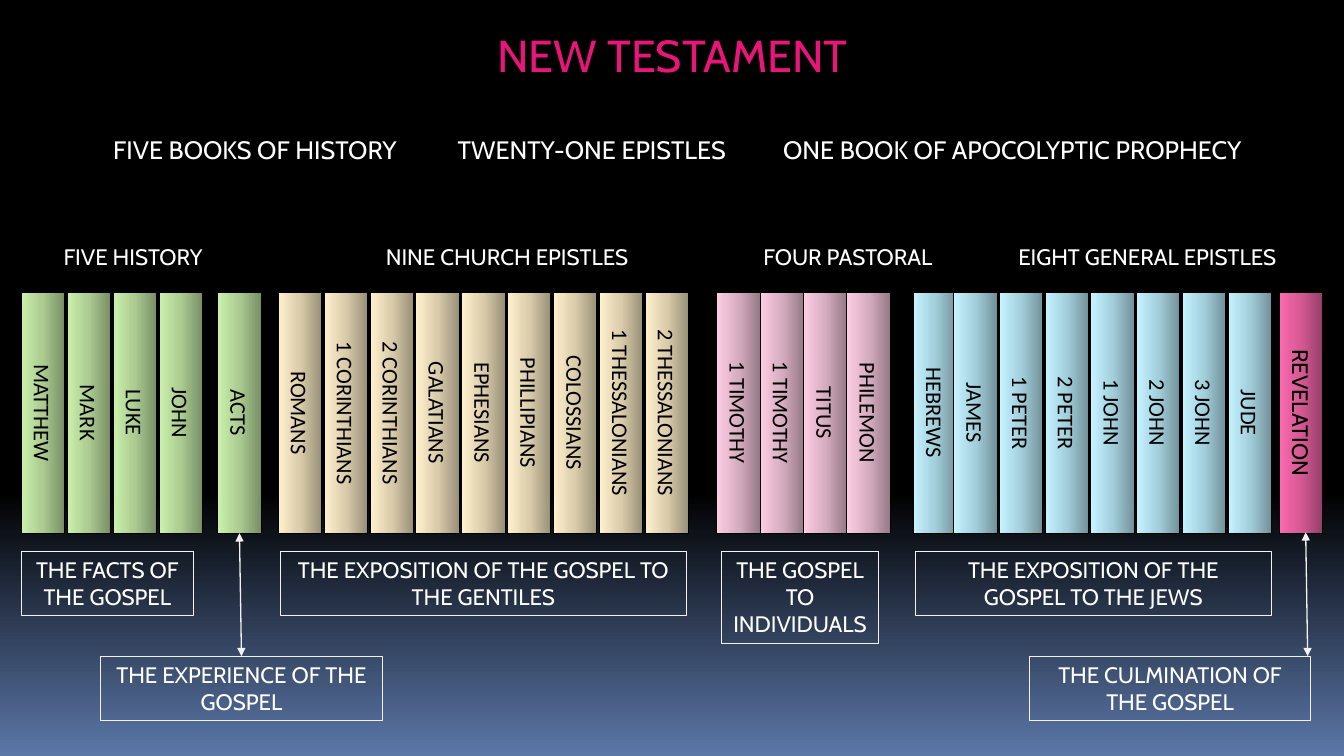
from lxml import etree
from pptx import Presentation
from pptx.dml.color import RGBColor
from pptx.enum import shapes, text
from pptx.oxml import ns
from pptx.util import Inches, Pt

HUES = {
    "black": "000000", "white": "FFFFFF", "rule": "F2F2F2",
    "title": "EA157A", "dusk": "5B77A8",
}
# Spine shades, from the right edge to the left
SPINES = {
    "green": ("788F66", "ABCB91", "CBF1AC"),
    "tan": ("999078", "DACCAB", "FFF1CE"),
    "pink": ("967987", "D6ADC0", "FECDE4"),
    "blue": ("72919A", "A2CFDB", "C5F3FF"),
    "rose": ("953E68", "D45993", "FC69AF"),
}
BOOK_TOP, BOOK_W, BOOK_H = 2.9, 0.43, 2.39

# Shade, left of first book, left of last book, names
SHELF = [
    ("green", 0.21, 1.58, ["MATTHEW", "MARK", "LUKE", "JOHN"]),
    ("green", 2.16, 2.16, ["ACTS"]),
    ("tan", 2.76, 6.4, ["ROMANS", "1 CORINTHIANS", "2 CORINTHIANS", "GALATIANS",
                        "EPHESIANS", "PHILLIPIANS", "COLOSSIANS",
                        "1 THESSALONIANS", "2 THESSALONIANS"]),
    ("pink", 7.11, 8.4, ["1 TIMOTHY", "1 TIMOTHY", "TITUS", "PHILEMON"]),
    ("blue", 9.06, 9.06, ["HEBREWS"]),
    ("blue", 9.46, 12.18, ["JAMES", "1 PETER", "2 PETER", "1 JOHN", "2 JOHN",
                           "3 JOHN", "JUDE"]),
    ("rose", 12.69, 12.69, ["REVELATION"]),
]
# Left, top, width, height, words
NOTES = [
    (0.21, 5.47, 1.71, 0.64, "THE FACTS OF THE GOSPEL"),
    (2.78, 5.47, 4.03, 0.64, "THE EXPOSITION OF THE GOSPEL TO THE GENTILES"),
    (7.16, 5.47, 1.55, 0.91, "THE GOSPEL TO INDIVIDUALS"),
    (9.08, 5.47, 3.53, 0.64, "THE EXPOSITION OF THE GOSPEL TO THE JEWS"),
    (1, 6.51, 2.79, 0.64, "THE EXPERIENCE OF THE GOSPEL"),
    (10.21, 6.51, 2.79, 0.64, "THE CULMINATION OF THE GOSPEL"),
]
# Centre and words
PARTS = [(2.53, "FIVE BOOKS OF HISTORY"), (5.87, "TWENTY-ONE EPISTLES"),
         (10.04, "ONE BOOK OF APOCOLYPTIC PROPHECY")]
GROUPS = [(1.32, "FIVE HISTORY"), (5.03, "NINE CHURCH EPISTLES"),
          (8.41, "FOUR PASTORAL"), (11.38, "EIGHT GENERAL EPISTLES")]


def shade(fill, root, stops, angle):
    """Give a fill a linear gradient with any number of stops."""
    fill.gradient()
    fill.gradient_angle = angle
    track = root.find(".//" + ns.qn("a:gsLst"))
    for stop in list(track):
        track.remove(stop)
    for place, hue in stops:
        stop = etree.SubElement(track, ns.qn("a:gs"), pos=str(place * 1000))
        etree.SubElement(stop, ns.qn("a:srgbClr"), val=hue)


def write(shape, words, size, hue, font="Cabin"):
    para = shape.text_frame.paragraphs[0]
    para.alignment = text.PP_ALIGN.CENTER
    run = para.add_run()
    run.text = words
    run.font.size = Pt(size)
    run.font.name = font
    run.font.color.rgb = RGBColor.from_string(HUES[hue])


def block(slide, box, edge, weight=0.75):
    shape = slide.shapes.add_shape(shapes.MSO_SHAPE.RECTANGLE, *map(Inches, box))
    shape.shadow.inherit = False
    shape.fill.background()
    shape.line.color.rgb = RGBColor.from_string(HUES[edge])
    shape.line.width = Pt(weight)
    shape.text_frame.word_wrap = True
    return shape


def title(slide, box):
    shape = block(slide, box, "black", 1.5)
    shape.fill.solid()
    shape.fill.fore_color.rgb = RGBColor.from_string(HUES["black"])
    shape.text_frame.vertical_anchor = text.MSO_ANCHOR.TOP
    write(shape, "NEW TESTAMENT", 32, "title")


def heads(slide, top, height, size, items):
    """Set a row of headings, each about its own centre."""
    wide = 5
    for mid, words in items:
        box = (mid - wide / 2, top, wide, height)
        shape = slide.shapes.add_textbox(*map(Inches, box))
        shape.text_frame.word_wrap = True
        write(shape, words, size, "white")


def book(slide, left, name, tone):
    shape = block(slide, (left, BOOK_TOP, BOOK_W, BOOK_H), "black")
    shade(shape.fill, shape.element, zip((0, 50, 100), SPINES[tone]), 180)
    frame = shape.text_frame
    frame.vertical_anchor = text.MSO_ANCHOR.MIDDLE
    body = shape.element.find(".//" + ns.qn("a:bodyPr"))
    body.set("vert", "vert")
    write(shape, name, 16, "black", "Cabin" if tone == "rose" else "Calibri")
    return shape


def shelf(slide):
    """Stand the books in evenly spaced runs and return them by name."""
    books = {}
    for tone, first, last, names in SHELF:
        pitch = (last - first) / max(len(names) - 1, 1)
        for i, name in enumerate(names):
            books[name] = book(slide, first + i * pitch, name, tone)
    return books


def note(slide, box, words):
    shape = block(slide, box, "rule")
    shape.text_frame.vertical_anchor = text.MSO_ANCHOR.TOP
    shape.text_frame.auto_size = text.MSO_AUTO_SIZE.SHAPE_TO_FIT_TEXT
    write(shape, words, 16, "white")
    return shape


def arrow(slide, start, end):
    line = slide.shapes.add_connector(
        shapes.MSO_CONNECTOR.STRAIGHT, *map(Inches, start + end))
    line.line.color.rgb = RGBColor.from_string(HUES["rule"])
    line.line.width = Pt(0.94)
    pen = line.line._get_or_add_ln()
    for tip in ("a:headEnd", "a:tailEnd"):
        etree.SubElement(pen, ns.qn(tip), type="triangle")
    etree.SubElement(line.element.spPr, ns.qn("a:effectLst"))
    return line


def main():
    deck = Presentation()
    deck.slide_width, deck.slide_height = Inches(13.33), Inches(7.5)
    slide = deck.slides.add_slide(deck.slide_layouts[6])
    night = [(0, HUES["black"]), (65, HUES["black"]), (100, HUES["dusk"])]
    shade(slide.background.fill, slide.element, night, 270)

    title(slide, (2.71, 0.23, 7.92, 0.68))
    heads(slide, 1.28, 0.4, 18, PARTS)
    heads(slide, 2.36, 0.37, 16, GROUPS)
    books = shelf(slide)
    notes = {words: note(slide, box, words) for *box, words in NOTES}

    link = arrow(slide, (2.39, 6.51), (2.37, 5.28))
    link.begin_connect(notes["THE EXPERIENCE OF THE GOSPEL"], 0)
    link.end_connect(books["ACTS"], 2)
    arrow(slide, (12.97, 6.51), (12.95, 5.28))
    deck.save("out.pptx")


if __name__ == "__main__":
    main()
